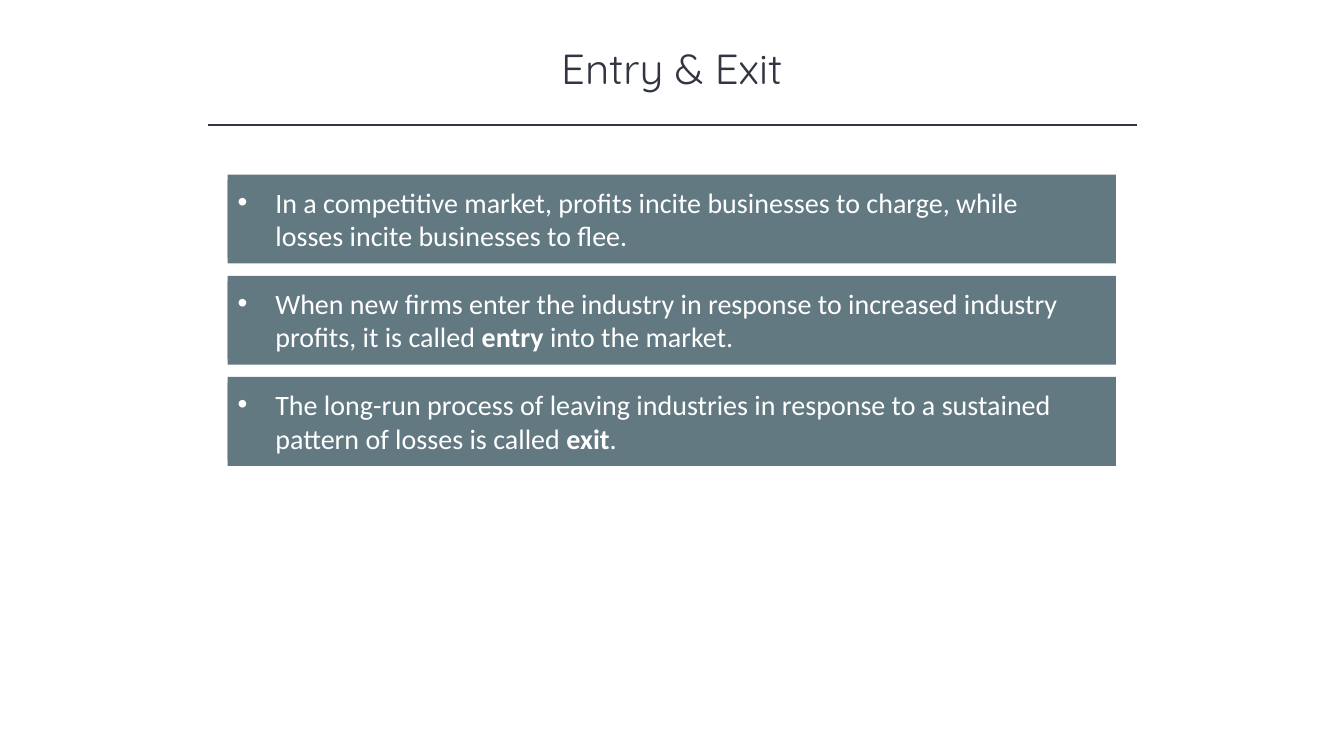
from lxml import etree
from pptx import Presentation
from pptx.dml.color import RGBColor
from pptx.enum.shapes import MSO_CONNECTOR, MSO_SHAPE
from pptx.enum.text import MSO_ANCHOR, MSO_AUTO_SIZE, PP_ALIGN
from pptx.oxml.ns import qn
from pptx.util import Cm, Pt

RECT = MSO_SHAPE.RECTANGLE
STRAIGHT = MSO_CONNECTOR.STRAIGHT
TOP = MSO_ANCHOR.TOP
GROW = MSO_AUTO_SIZE.SHAPE_TO_FIT_TEXT
LEFT, CENTER = PP_ALIGN.LEFT, PP_ALIGN.CENTER

INK, SLATE, WHITE = "323542", "627981", "FFFFFF"
BAND_LEFT, BAND_TOP, BAND_PITCH = 5.74, 4.4, 2.55
BAND_WIDTH, BAND_HEIGHT = 22.38, 2.24
TEXT_WIDTH, TEXT_HEIGHT = 21.69, 1.96

POINTS = [
    [("In a competitive market, profits incite businesses to charge, while "
      "losses incite businesses to flee.", False)],
    [("When new firms enter the industry in response to increased industry "
      "profits, it is called ", False),
     ("entry", True), (" into the market.", False)],
    [("The long-run process of leaving industries in response to a sustained "
      "pattern of losses is called ", False),
     ("exit", True), (".", False)],
]


def style_font(font, name, size, color):
    font.name = name
    font.size = Pt(size)
    font.color.rgb = RGBColor.from_string(color)


def add_rect(shapes, top, width, height):
    sp = shapes.add_shape(RECT, Cm(BAND_LEFT), Cm(top), Cm(width), Cm(height))
    sp.shadow.inherit = False
    sp.fill.solid()
    sp.fill.fore_color.rgb = RGBColor.from_string(SLATE)
    sp.line.fill.background()
    return sp


prs = Presentation()
prs.slide_width, prs.slide_height = Cm(33.87), Cm(19.05)
s = prs.slides.add_slide(prs.slide_layouts[5])

title = s.shapes.title
title.left, title.top, title.width, title.height = Cm(4.23), Cm(0.94), Cm(25.4), Cm(1.55)
tf = title.text_frame
tf.text = "Entry & Exit"
tf.word_wrap = True
tf.auto_size = GROW
tf.vertical_anchor = TOP
p = tf.paragraphs[0]
p.alignment = CENTER
style_font(p.runs[0].font, "Quicksand", 30, INK)

rule = s.shapes.add_connector(STRAIGHT, Cm(5.23), Cm(3.15), Cm(28.65), Cm(3.15))
rule.line.color.rgb = RGBColor.from_string(INK)
rule.line.width = Pt(1)
etree.SubElement(rule._element.spPr, qn("a:effectLst"))

for i, point in enumerate(POINTS):
    top = BAND_TOP + i * BAND_PITCH
    group = s.shapes.add_group_shape()
    add_rect(group.shapes, top, BAND_WIDTH, BAND_HEIGHT)
    text_top = top + (BAND_HEIGHT - TEXT_HEIGHT) / 2
    sp = add_rect(group.shapes, text_top, TEXT_WIDTH, TEXT_HEIGHT)
    tf = sp.text_frame
    tf.word_wrap = True
    tf.auto_size = GROW
    tf.vertical_anchor = TOP
    p = tf.paragraphs[0]
    p.alignment = LEFT
    pPr = p._p.get_or_add_pPr()
    pPr.set("marL", str(Cm(0.95)))
    pPr.set("indent", str(-Cm(0.95)))
    etree.SubElement(pPr, qn("a:buFont"), typeface="Arial")
    etree.SubElement(pPr, qn("a:buChar"), char="•")
    for text, bold in point:
        r = p.add_run()
        r.text = text
        r.font.bold = bold
        style_font(r.font, "Calibri", 20, WHITE)

prs.save("out.pptx")
